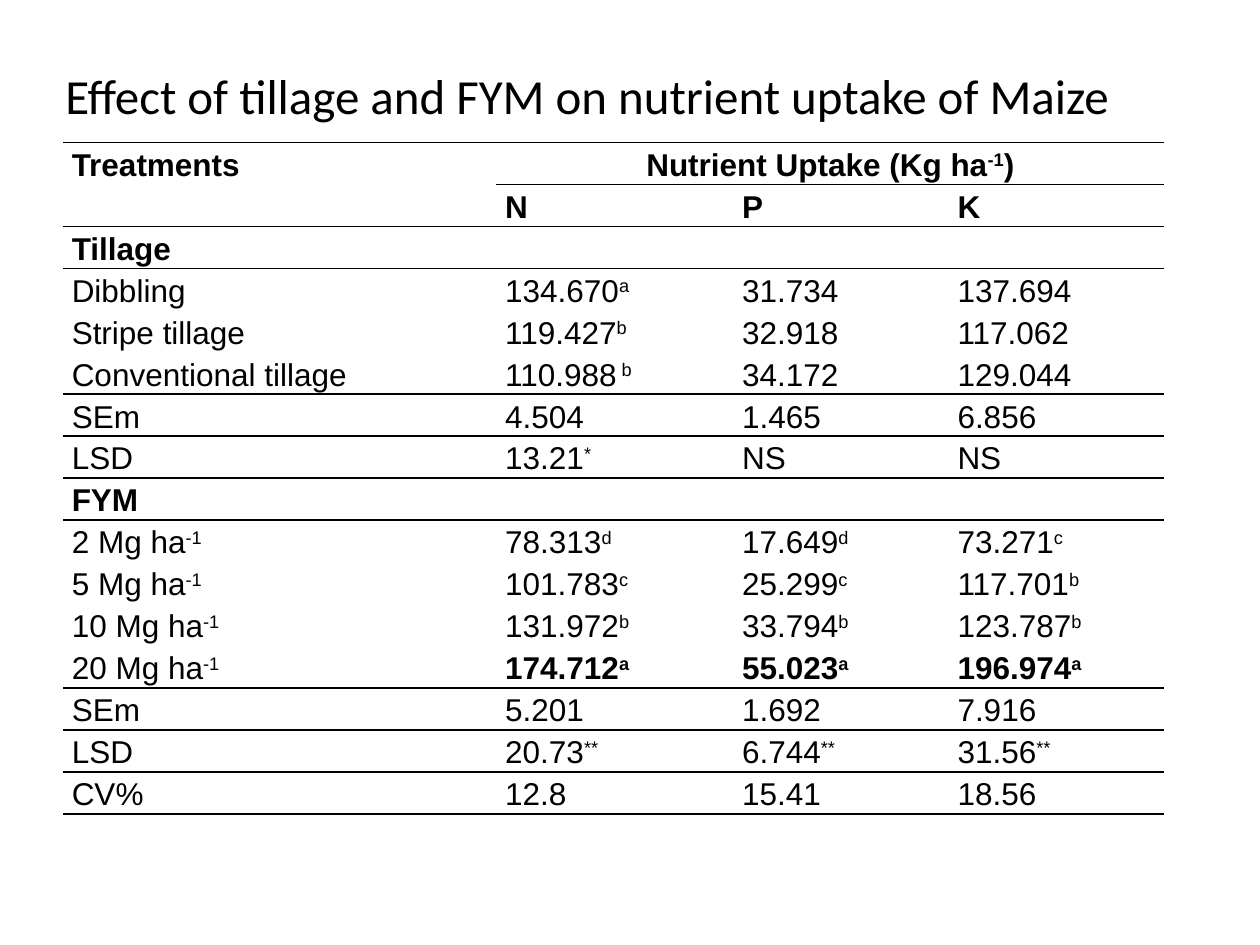
from lxml.etree import SubElement
from pptx import Presentation
from pptx.dml.color import RGBColor
from pptx.enum.text import MSO_ANCHOR, PP_ALIGN
from pptx.oxml import parse_xml
from pptx.oxml.ns import nsdecls, qn
from pptx.util import Inches, Pt

COLORS = {"ink": "000000"}
NO_GRID_STYLE = "{2D5ABB26-0587-4C30-8999-92F81FD0307C}"

# Superscripts stand between carets: "ha^-1^"
UPTAKE_ROWS = [
    ["Treatments", "Nutrient Uptake (Kg ha^-1^)", "", ""],
    ["", "N", "P", "K"],
    ["Tillage", "", "", ""],
    ["Dibbling", "134.670^a", "31.734", "137.694"],
    ["Stripe tillage", "119.427^b", "32.918", "117.062"],
    ["Conventional tillage", "110.988^ b", "34.172", "129.044"],
    ["SEm", "4.504", "1.465", "6.856"],
    ["LSD", "13.21^*", "NS", "NS"],
    ["FYM", "", "", ""],
    ["2 Mg ha^-1", "78.313^d", "17.649^d", "73.271^c"],
    ["5 Mg ha^-1", "101.783^c", "25.299^c", "117.701^b"],
    ["10 Mg ha^-1", "131.972^b", "33.794^b", "123.787^b"],
    ["20 Mg ha^-1", "174.712^a", "55.023^a", "196.974^a"],
    ["SEm", "5.201", "1.692", "7.916"],
    ["LSD", "20.73^**", "6.744^**", "31.56^**"],
    ["CV%", "12.8", "15.41", "18.56"],
]
COLUMN_WIDTHS = [3.44, 1.88, 1.71, 1.71]
TABLE_HEIGHT = 5.33
HEADING_ROWS = {0, 1, 2, 8}
BEST_ROW = 12
RULED_ROWS = {1, 5, 7, 12, 14, 15}  # rows with a line below


def write_text(frame, text, font="Arial", size=18, bold=False,
               align=PP_ALIGN.LEFT, spacing=None):
    paragraph = frame.paragraphs[0]
    paragraph.alignment = align
    paragraph.line_spacing = spacing
    for index, part in enumerate(text.split("^")):
        if not part:
            continue
        run = paragraph.add_run()
        run.text = part
        run.font.name = font
        run.font.size = Pt(size)
        run.font.bold = bold
        run.font.color.rgb = RGBColor.from_string(COLORS["ink"])
        if index % 2:
            run.font._element.set("baseline", "30000")


def rule_cell(cell, sides):
    """Draw a 1 pt line on the given sides, in the order T, B."""
    properties = cell._tc.get_or_add_tcPr()
    for position, side in enumerate(sides):
        line = parse_xml(f'<a:ln{side} {nsdecls("a")} w="{Pt(1)}"/>')
        fill = SubElement(line, qn("a:solidFill"))
        SubElement(fill, qn("a:srgbClr")).set("val", COLORS["ink"])
        properties.insert(position, line)


def has_line_below(row, column):
    return row in RULED_ROWS or (row == 0 and column > 0)


def add_title(slide, text):
    box = slide.shapes.add_textbox(Inches(0.42), Inches(0.42),
                                   Inches(9), Inches(0.67))
    box.text_frame.word_wrap = True
    box.text_frame.vertical_anchor = MSO_ANCHOR.MIDDLE
    write_text(box.text_frame, text, font="Calibri", size=28)


def add_uptake_table(slide):
    table = slide.shapes.add_table(
        len(UPTAKE_ROWS), len(COLUMN_WIDTHS), Inches(0.5), Inches(1.13),
        Inches(sum(COLUMN_WIDTHS)), Inches(TABLE_HEIGHT)).table
    table.first_row = table.horz_banding = False
    table._tbl.tblPr.find(qn("a:tableStyleId")).text = NO_GRID_STYLE
    for column, width in zip(table.columns, COLUMN_WIDTHS):
        column.width = Inches(width)
    table.cell(0, 1).merge(table.cell(0, 3))

    for r, values in enumerate(UPTAKE_ROWS):
        for c, value in enumerate(values):
            cell = table.cell(r, c)
            cell.margin_left = cell.margin_right = Inches(0.07)
            cell.margin_top = cell.margin_bottom = 0
            cell.fill.background()
            if value:
                write_text(cell.text_frame, value, spacing=1.15,
                           bold=r in HEADING_ROWS or (r == BEST_ROW and c > 0),
                           align=PP_ALIGN.CENTER if (r, c) == (0, 1) else PP_ALIGN.LEFT)
            top = "T" if r == 0 or has_line_below(r - 1, c) else ""
            bottom = "B" if has_line_below(r, c) else ""
            rule_cell(cell, top + bottom)


def main():
    presentation = Presentation()
    presentation.slide_width = Inches(10)
    presentation.slide_height = Inches(7.5)
    slide = presentation.slides.add_slide(presentation.slide_layouts[6])
    add_uptake_table(slide)
    add_title(slide, "Effect of tillage and FYM on nutrient uptake of Maize")
    presentation.save("out.pptx")


if __name__ == "__main__":
    main()
